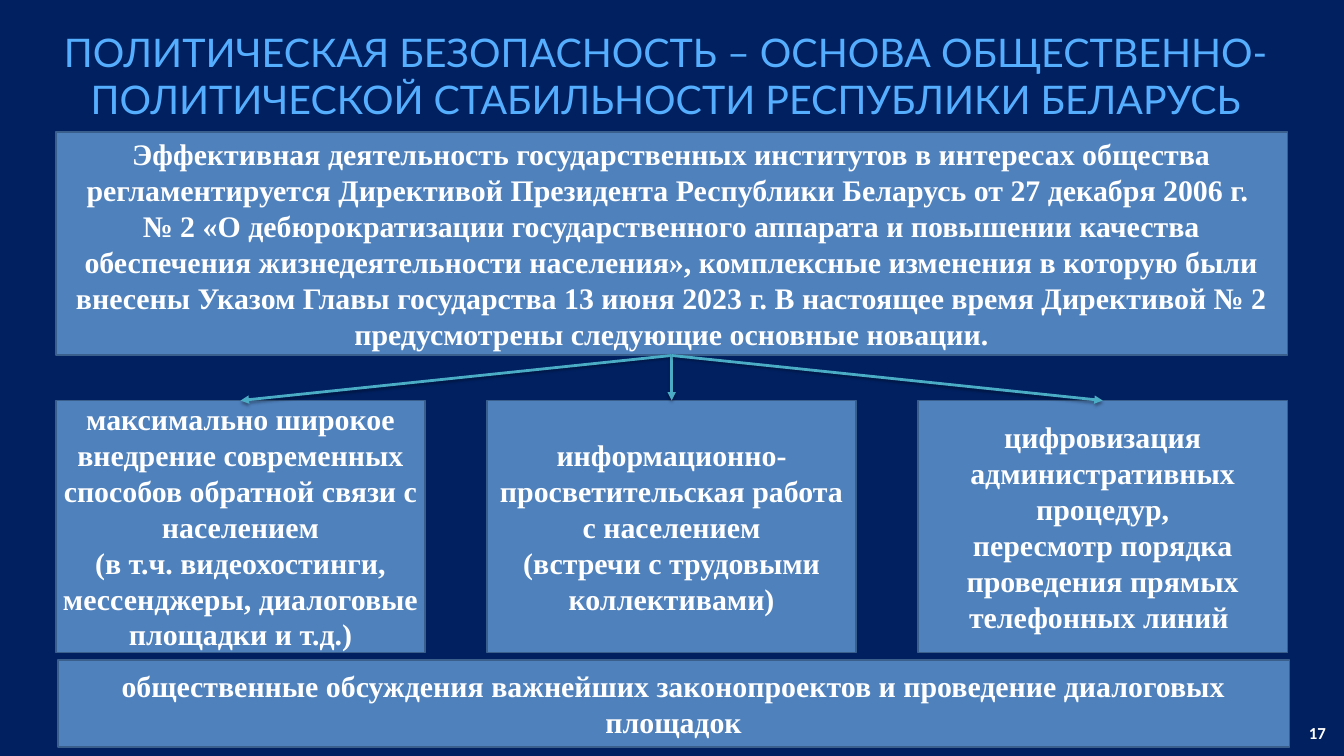
from pptx import Presentation
from pptx.dml.color import RGBColor
from pptx.enum.shapes import MSO_CONNECTOR, MSO_SHAPE
from pptx.enum.text import MSO_ANCHOR, PP_ALIGN
from pptx.oxml import parse_xml
from pptx.oxml.ns import nsdecls, qn
from pptx.util import Inches, Pt

NAVY = RGBColor(0x00, 0x20, 0x60)
SKY = RGBColor(0x56, 0xAE, 0xFF)
BLUE = RGBColor(0x4F, 0x81, 0xBD)
EDGE = RGBColor(0x3A, 0x5F, 0x8C)
TEAL = RGBColor(0x4B, 0xAC, 0xC6)
WHITE = RGBColor(0xFF, 0xFF, 0xFF)

TITLE = ("ПОЛИТИЧЕСКАЯ БЕЗОПАСНОСТЬ – ОСНОВА ОБЩЕСТВЕННО-"
         "ПОЛИТИЧЕСКОЙ СТАБИЛЬНОСТИ РЕСПУБЛИКИ БЕЛАРУСЬ")
DIRECTIVE = [[
    "Эффективная деятельность государственных институтов в интересах общества "
    "регламентируется Директивой Президента Республики Беларусь от 27 декабря 2006 г. ",
    "№ 2 «О дебюрократизации государственного аппарата и повышении качества "
    "обеспечения жизнедеятельности населения», комплексные изменения в которую были "
    "внесены Указом Главы государства 13 июня 2023 г. В настоящее время Директивой № 2 "
    "предусмотрены следующие основные новации.",
]]
INNOVATIONS = [
    [["максимально широкое внедрение современных способов обратной связи с населением",
      "(в т.ч. видеохостинги, мессенджеры, диалоговые площадки и т.д.)"]],
    [["информационно-просветительская работа с населением",
      "(встречи с трудовыми коллективами)"]],
    [["цифровизация административных процедур,"],
     ["пересмотр порядка проведения прямых телефонных линий "]],
]
DISCUSSIONS = [["общественные обсуждения важнейших законопроектов и проведение "
                "диалоговых площадок"]]

SHADOW = (f'<a:effectLst {nsdecls("a")}><a:outerShdw blurRad="{Pt(3.1)}" dist="{Pt(1.8)}" '
          'dir="5400000" rotWithShape="0"><a:srgbClr val="000000"><a:alpha val="35000"/>'
          '</a:srgbClr></a:outerShdw></a:effectLst>')


def add_run(p, text, font, size, color, bold=False):
    r = p.add_run()
    r.text = text
    r.font.name = font
    r.font.size = Pt(size)
    r.font.bold = bold
    r.font.color.rgb = color


def add_label(s, x, y, w, h, text, align, font, size, color, bold=False):
    tf = s.shapes.add_textbox(Inches(x), Inches(y), Inches(w), Inches(h)).text_frame
    tf.word_wrap = True
    p = tf.paragraphs[0]
    p.alignment = align
    add_run(p, text, font, size, color, bold)
    return tf


def add_title(s, x, y, w, h):
    tf = add_label(s, x, y, w, h, TITLE, PP_ALIGN.CENTER, "Lato", 42.2, SKY)
    tf.margin_left = tf.margin_right = tf.margin_top = tf.margin_bottom = 0
    tf.paragraphs[0].line_spacing = Pt(50.6)


def add_page_number(s, x, y, w, h):
    tf = add_label(s, x, y, w, h, "17", PP_ALIGN.RIGHT, "Calibri", 18, WHITE, True)
    tf.vertical_anchor = MSO_ANCHOR.MIDDLE


def add_box(s, x, y, w, h, paragraphs):
    sp = s.shapes.add_shape(MSO_SHAPE.RECTANGLE, Inches(x), Inches(y), Inches(w), Inches(h))
    sp.shadow.inherit = False
    sp.fill.solid()
    sp.fill.fore_color.rgb = BLUE
    sp.line.color.rgb = EDGE
    sp.line.width = Pt(2)
    tf = sp.text_frame
    tf.word_wrap = True
    tf.vertical_anchor = MSO_ANCHOR.MIDDLE
    for i, lines in enumerate(paragraphs):
        p = tf.paragraphs[0] if i == 0 else tf.add_paragraph()
        p.alignment = PP_ALIGN.CENTER
        for j, line in enumerate(lines):
            if j:
                p.add_line_break()
            add_run(p, line, "Times New Roman", 32, WHITE, True)
    return sp


def add_arrow(s, source, target):
    c = s.shapes.add_connector(MSO_CONNECTOR.STRAIGHT, 0, 0, 0, 0)
    c.begin_connect(source, 2)
    c.end_connect(target, 0)
    c.line.color.rgb = TEAL
    c.line.width = Pt(3)
    spPr = c._element.spPr
    spPr.find(qn("a:ln")).append(parse_xml(f'<a:tailEnd {nsdecls("a")} type="triangle"/>'))
    spPr.append(parse_xml(SHADOW))


def add_innovations(s, x, y, w, h):
    box_w, box_h, head_h = 5.5, 3.75, 3.33
    step = (w - box_w) / (len(INNOVATIONS) - 1)
    head = add_box(s, x, y, w, head_h, DIRECTIVE)
    boxes = [add_box(s, x + i * step, y + h - box_h, box_w, box_h, text)
             for i, text in enumerate(INNOVATIONS)]
    for box in boxes:
        add_arrow(s, head, box)


def main():
    prs = Presentation()
    prs.slide_width = Inches(20)
    prs.slide_height = Inches(11.25)
    s = prs.slides.add_slide(prs.slide_layouts[6])
    s.background.fill.solid()
    s.background.fill.fore_color.rgb = NAVY
    add_page_number(s, 17.5, 10.71, 2.33, 0.4)
    add_title(s, 0, 0.42, 19.83, 1.42)
    add_innovations(s, 0.83, 1.96, 18.33, 7.75)
    add_box(s, 0.86, 9.82, 18.33, 1.29, DISCUSSIONS)
    prs.save("out.pptx")


if __name__ == "__main__":
    main()
